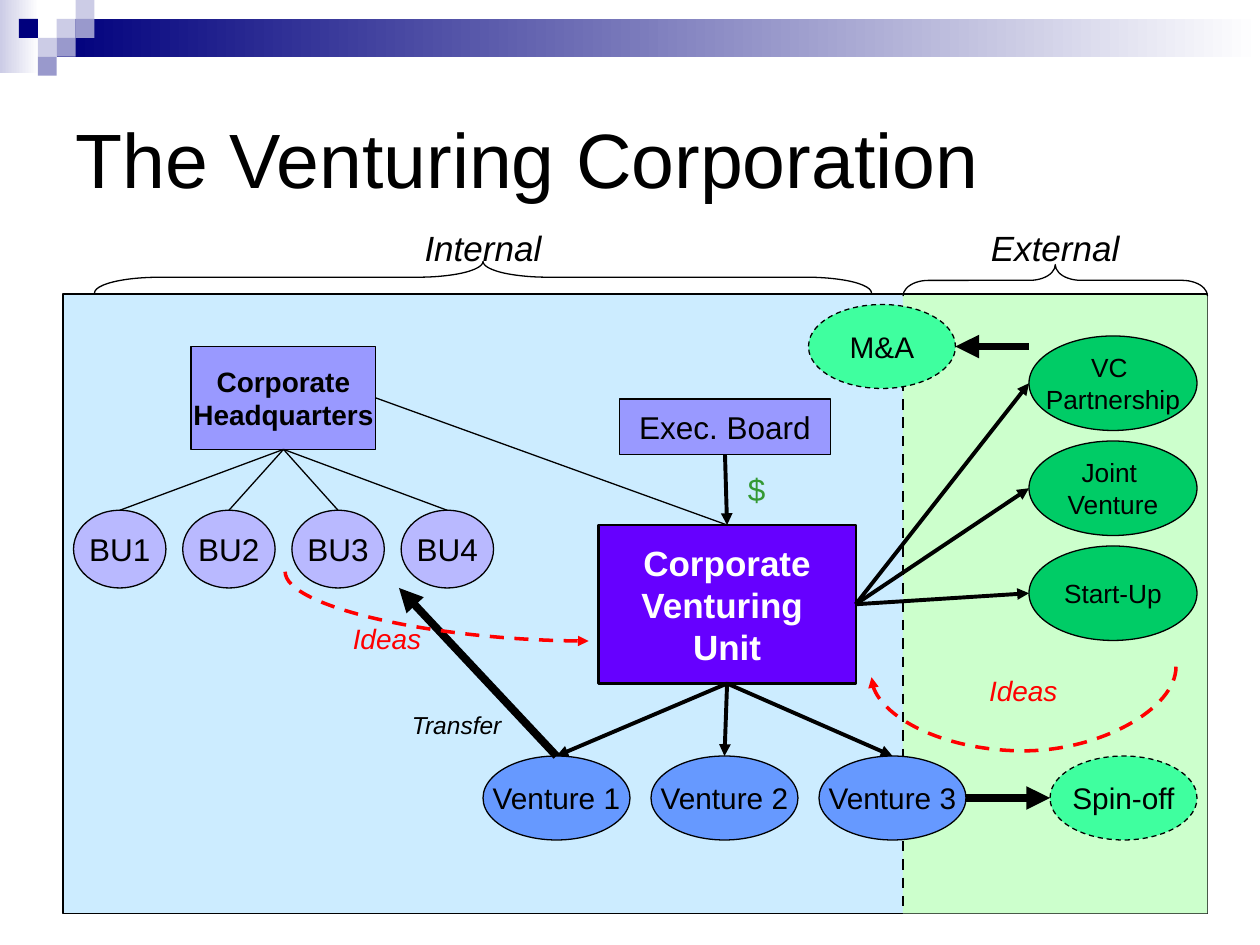
from dataclasses import dataclass
from typing import Any, Optional

from lxml.etree import SubElement
from pptx import Presentation
from pptx.dml.color import RGBColor
from pptx.enum.dml import MSO_LINE
from pptx.enum.shapes import MSO_CONNECTOR, MSO_SHAPE
from pptx.enum.text import MSO_ANCHOR, MSO_AUTO_SIZE, PP_ALIGN
from pptx.oxml.ns import qn
from pptx.util import Inches, Pt

BLACK = RGBColor(0x00, 0x00, 0x00)
WHITE = RGBColor(0xFF, 0xFF, 0xFF)
RED = RGBColor(0xFF, 0x00, 0x00)
DOLLAR = RGBColor(0x33, 0x99, 0x33)
NAVY = RGBColor(0x00, 0x00, 0x7D)
PALE = RGBColor(0xCC, 0xCC, 0xE6)
MID = RGBColor(0x99, 0x99, 0xCC)
SKY = RGBColor(0xCC, 0xEC, 0xFF)
MINT = RGBColor(0xCC, 0xFF, 0xCC)
LILAC = RGBColor(0x99, 0x99, 0xFF)
LAVENDER = RGBColor(0xB9, 0xB9, 0xFF)
VIOLET = RGBColor(0x66, 0x00, 0xFF)
GREEN = RGBColor(0x00, 0xCC, 0x66)
AQUA = RGBColor(0x3F, 0xFF, 0x9F)
BLUE = RGBColor(0x66, 0x99, 0xFF)

RECT, OVAL = MSO_SHAPE.RECTANGLE, MSO_SHAPE.OVAL
COLS, ROWS = 120, 90
TILE = 1.8

deck = Presentation()
deck.slide_width, deck.slide_height = Inches(10), Inches(7.5)
slide = deck.slides.add_slide(deck.slide_layouts[5])
shapes = slide.shapes


@dataclass
class Box:
    x: float
    y: float
    w: float
    h: float

    @property
    def top(self) -> tuple:
        return self.x + self.w / 2, self.y

    @property
    def base(self) -> tuple:
        return self.x + self.w / 2, self.y + self.h

    @property
    def left(self) -> tuple:
        return self.x, self.y + self.h / 2

    @property
    def right(self) -> tuple:
        return self.x + self.w, self.y + self.h / 2


@dataclass
class Node:
    box: Box
    text: str
    fill: RGBColor
    size: float
    kind: Any = OVAL
    bold: bool = False
    ink: RGBColor = BLACK
    dash: bool = False
    wrap: bool = False


@dataclass
class Label:
    box: Box
    text: str
    size: float
    ink: RGBColor = BLACK
    slant: bool = True
    wrap: bool = False


def col(n: float) -> int:
    return round(deck.slide_width * n / COLS)


def row(n: float) -> int:
    return round(deck.slide_height * n / ROWS)


def place(box: Box) -> tuple:
    return col(box.x), row(box.y), col(box.w), row(box.h)


def style(target: Any, values: dict) -> None:
    for name, value in values.items():
        setattr(target, name, value)


def stroke(line: Any, ink: RGBColor, width: float, dash: bool = False) -> None:
    line.color.rgb = ink
    line.width = Pt(width)
    if dash:
        line.dash_style = MSO_LINE.DASH


def write(frame: Any, text: str, align: Any, font: dict) -> None:
    frame.text = text
    for para in frame.paragraphs:
        para.alignment = align
        for run in para.runs:
            run.font.color.rgb = font["ink"]
            style(run.font, {"name": "Arial", **font["set"]})


def block(box: Box, kind: Any = RECT, fill: Optional[RGBColor] = None,
          edge: float = 0, dash: bool = False) -> Any:
    shape = shapes.add_shape(kind, *place(box))
    shape.shadow.inherit = False
    if fill is None:
        shape.fill.background()
    else:
        shape.fill.solid()
        shape.fill.fore_color.rgb = fill
    if edge:
        stroke(shape.line, BLACK, edge, dash)
    else:
        shape.line.fill.background()
    return shape


def fade(box: Box, start: RGBColor) -> None:
    fill = block(box).fill
    fill.gradient()
    fill.gradient_angle = 0
    for stop, ink in zip(fill.gradient_stops, (start, WHITE)):
        stop.color.rgb = ink


def draw(node: Node) -> None:
    edge = 1.25 if node.wrap else 0.75
    frame = block(node.box, node.kind, node.fill, edge, node.dash).text_frame
    write(frame, node.text, PP_ALIGN.CENTER,
          {"ink": node.ink, "set": {"size": Pt(node.size), "bold": node.bold}})
    style(frame, {"word_wrap": node.wrap, "vertical_anchor": MSO_ANCHOR.MIDDLE})


def note(label: Label) -> None:
    frame = shapes.add_textbox(*place(label.box)).text_frame
    write(frame, label.text, PP_ALIGN.CENTER,
          {"ink": label.ink, "set": {"size": Pt(label.size), "italic": label.slant}})
    style(frame, {"word_wrap": label.wrap, "auto_size": MSO_AUTO_SIZE.SHAPE_TO_FIT_TEXT})


def link(start: tuple, end: tuple, width: float = 0.75, head: bool = False,
         dash: bool = False, ink: RGBColor = BLACK,
         kind: Any = MSO_CONNECTOR.STRAIGHT) -> Any:
    wire = shapes.add_connector(kind, col(start[0]), row(start[1]), col(end[0]), row(end[1]))
    stroke(wire.line, ink, width, dash)
    if head:
        SubElement(wire.line._get_or_add_ln(), qn("a:tailEnd"), type="triangle")
    SubElement(wire._element.spPr, qn("a:effectLst"))
    return wire


def curve(start: tuple, end: tuple, turn: int, preset: str, bend: int = 0) -> None:
    wire = link(start, end, 2, True, True, RED, MSO_CONNECTOR.CURVE)
    props = wire._element.spPr
    props.find(qn("a:xfrm")).set("rot", str(turn * 60000))
    geom = props.find(qn("a:prstGeom"))
    geom.set("prst", preset)
    if bend:
        SubElement(geom.find(qn("a:avLst")), qn("a:gd"), name="adj1", fmla=f"val {bend}")


fade(Box(0, 0, 3.7, 7), PALE)
fade(Box(3 * TILE, TILE, COLS - 3 * TILE, 3.6), NAVY)
for across, down, tint in ((3, 1, PALE), (4, 0, PALE), (4, 1, MID), (2, 2, PALE),
                           (1, 1, NAVY), (3, 2, MID), (2, 3, MID)):
    block(Box(across * TILE, down * TILE, TILE, TILE), fill=tint)

title = shapes.title
style(title, dict(zip(("left", "top", "width", "height"), place(Box(6, 6, 108, 18)))))
write(title.text_frame, "The Venturing Corporation", PP_ALIGN.LEFT,
      {"ink": BLACK, "set": {"size": Pt(44)}})
title.text_frame.vertical_anchor = MSO_ANCHOR.MIDDLE

block(Box(6, 28, 109, 59), fill=SKY, edge=0.75)
block(Box(86, 28, 29, 59), fill=MINT)
link((86, 31), (86, 87), 1.5, dash=True)
link((86, 28), (115, 28))

head = Box(18.2, 33, 17.6, 9.8)
board = Box(59, 38, 20.1, 5.3)
hub = Box(57, 50, 24.5, 15.1)
units = [Box(7 + 10.4 * i, 48.6, 8.8, 7.4) for i in range(4)]
firms = [Box(46 + 16 * i, 72, 14, 8) for i in range(3)]
allies = [Box(98, 32 + 10 * i, 16, 9) for i in range(3)]
merge = Box(77, 29, 14, 8)
spin = Box(100, 72, 14, 8)

nodes = [
    Node(head, "Corporate\nHeadquarters", LILAC, 16, RECT, bold=True),
    Node(board, "Exec. Board", LILAC, 18, RECT),
    Node(hub, "Corporate Venturing \nUnit", VIOLET, 20, RECT, True, WHITE, wrap=True),
    Node(merge, "M&A", AQUA, 17, dash=True),
    Node(spin, "Spin-off", AQUA, 17, dash=True),
]
nodes += [Node(box, f"BU{i}", LAVENDER, 18) for i, box in enumerate(units, 1)]
nodes += [Node(box, f"Venture {i}", BLUE, 17) for i, box in enumerate(firms, 1)]
nodes += [Node(box, text, GREEN, 15) for box, text in
          zip(allies, ("VC \nPartnership", "Joint \vVenture", "Start-Up"))]
for node in nodes:
    draw(node)

for box, bend in ((Box(44.5, -10.6, 3, 74), 2.06), (Box(99, 12.2, 3, 29), 0.81)):
    brace = block(box, MSO_SHAPE.LEFT_BRACE, edge=0.75)
    brace.rotation = 90
    brace.adjustments[0] = bend

for unit in units:
    link(unit.top, head.base)
link(head.right, hub.top)
link(board.base, hub.top, 2.25, True)
for firm in firms:
    link(hub.base, firm.top, 2.25, True)
for ally in allies:
    link(hub.right, ally.left, 2.25, True)
for start, end in ((firms[0].top, (38, 56)), (firms[2].right, spin.left),
                   ((98, 33), merge.right)):
    link(start, end, 4.5, True)
curve((44.9, 43.3), (38.3, 72.2), 270, "curvedConnector2")
curve((97, 49.5), (98, 78.5), 90, "curvedConnector3", 800000)

for label in (
    Label(Box(6, 21, 80, 5.2), "Internal", 20, wrap=True),
    Label(Box(86, 21, 29, 5.2), "External", 20, wrap=True),
    Label(Box(70, 44.2, 4.1, 4.8), "$", 18, DOLLAR, False),
    Label(Box(38, 67, 11, 4), "Transfer", 14),
    Label(Box(32.4, 58.6, 8.9, 4.4), "Ideas", 16, RED),
    Label(Box(93, 63.6, 8.9, 4.4), "Ideas", 16, RED),
):
    note(label)

deck.save("out.pptx")
